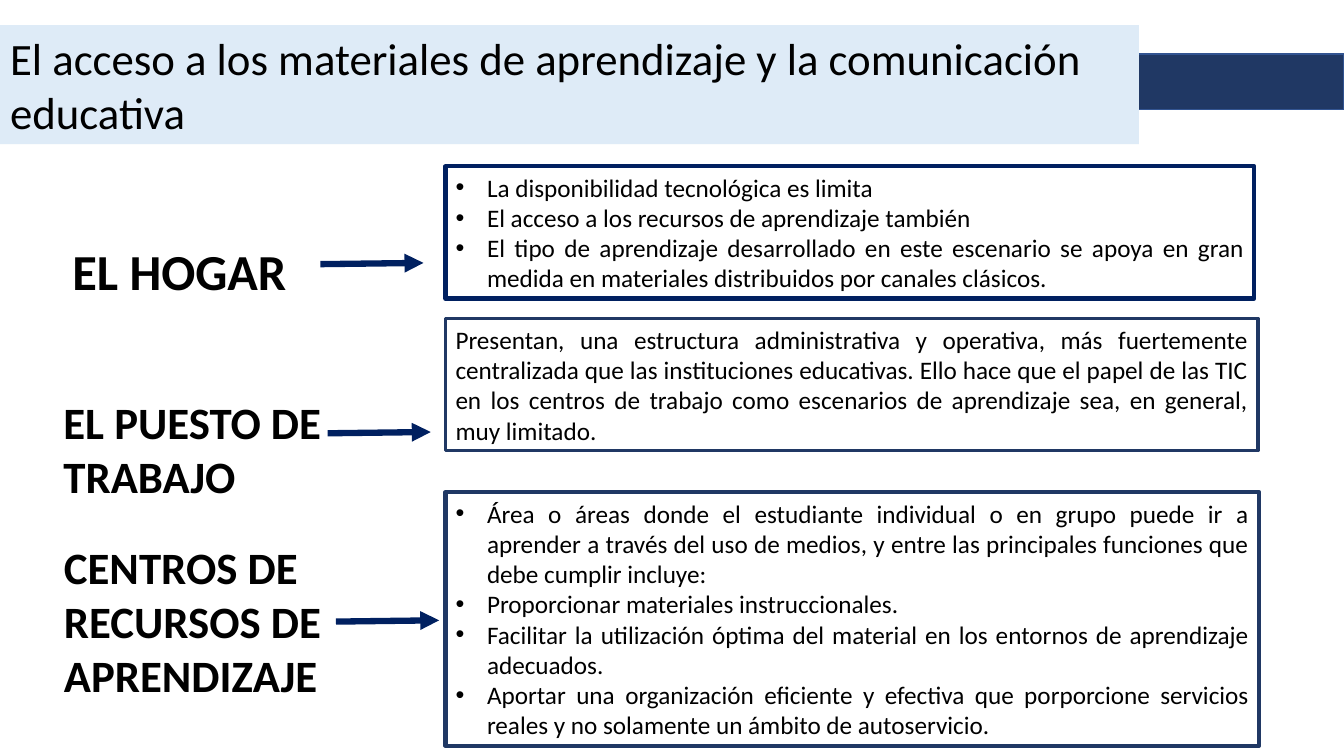
from lxml.etree import SubElement
from pptx import Presentation
from pptx.dml.color import RGBColor
from pptx.enum.shapes import MSO_CONNECTOR as Connector, MSO_SHAPE as Shape
from pptx.enum.text import MSO_ANCHOR as Anchor, MSO_AUTO_SIZE as AutoSize, PP_ALIGN as Align
from pptx.oxml.ns import qn
from pptx.util import Pt

COLORS = {
    "text": "000000",
    "white": "FFFFFF",
    "title": "DEEBF7",
    "band": "203864",
    "band_edge": "325491",
    "navy": "002060",
}
BULLET_INDENT = 22.5
BOX_LEFT = 318.3


def color(name):
    return RGBColor.from_string(COLORS[name])


class SlideBuilder:
    font = "Calibri"

    def __init__(self, presentation):
        self.slide = presentation.slides.add_slide(presentation.slide_layouts[5])

    def set_text(self, shape, paragraphs, size, bold=False, align=Align.LEFT,
                 anchor=Anchor.TOP, bullets=False, wrap=True):
        frame = shape.text_frame
        frame.text = "\n".join(paragraphs)
        frame.word_wrap = wrap
        frame.auto_size = AutoSize.SHAPE_TO_FIT_TEXT
        frame.vertical_anchor = anchor
        for paragraph in frame.paragraphs:
            paragraph.alignment = align
            paragraph.line_spacing = 1.0
            paragraph.font.name = self.font
            paragraph.font.size = Pt(size)
            paragraph.font.bold = bold
            paragraph.font.color.rgb = color("text")
            if bullets:
                self.add_bullet(paragraph)

    def add_bullet(self, paragraph):
        properties = paragraph._p.get_or_add_pPr()
        properties.set("marL", str(Pt(BULLET_INDENT)))
        properties.set("indent", str(-Pt(BULLET_INDENT)))
        # Bullet elements must precede the default run properties
        defaults = properties.find(qn("a:defRPr"))
        for tag, key, value in (("a:buFont", "typeface", "Arial"), ("a:buChar", "char", "•")):
            element = SubElement(properties, qn(tag))
            element.set(key, value)
            if defaults is not None:
                defaults.addprevious(element)

    def rectangle(self, left, top, width, height, fill, line, weight):
        shape = self.slide.shapes.add_shape(
            Shape.RECTANGLE, Pt(left), Pt(top), Pt(width), Pt(height))
        shape.shadow.inherit = False
        shape.fill.solid()
        shape.fill.fore_color.rgb = color(fill)
        shape.line.color.rgb = color(line)
        shape.line.width = Pt(weight)
        return shape

    def title(self, text, left, top, width, height):
        title = self.slide.shapes.title
        title.left, title.top, title.width, title.height = map(Pt, (left, top, width, height))
        title.fill.solid()
        title.fill.fore_color.rgb = color("title")
        self.set_text(title, [text], 32, anchor=Anchor.MIDDLE)
        return title

    def label(self, text, left, top, width, height, size, wrap):
        box = self.slide.shapes.add_textbox(Pt(left), Pt(top), Pt(width), Pt(height))
        self.set_text(box, [text], size, bold=True, wrap=wrap)

    def description(self, paragraphs, top, width, height, line, weight):
        box = self.rectangle(BOX_LEFT, top, width, height, "white", line, weight)
        self.set_text(box, paragraphs, 18, align=Align.JUSTIFY, anchor=Anchor.MIDDLE,
                      bullets=len(paragraphs) > 1)

    def arrow(self, left, top):
        """Draw a short, slightly rising arrow from a label to its description."""
        arrow = self.slide.shapes.add_connector(
            Connector.STRAIGHT, Pt(left), Pt(top), Pt(left + 73.7), Pt(top - 0.9))
        arrow.line.color.rgb = color("navy")
        arrow.line.width = Pt(4.5)
        SubElement(arrow.line._get_or_add_ln(), qn("a:tailEnd")).set("type", "triangle")
        SubElement(arrow._element.spPr, qn("a:effectLst"))


# label, label frame, label size, wrap; paragraphs, box frame, line, weight; arrow start
SCENARIOS = [
    ("EL HOGAR", (44.6, 167.8, 169.2, 51), 36, False,
     ["La disponibilidad tecnológica es limita",
      "El acceso a los recursos de aprendizaje también",
      "El tipo de aprendizaje desarrollado en este escenario se apoya en gran medida "
      "en materiales distribuidos por canales clásicos."],
     (118.8, 577.6, 94.5), "navy", 3, (228.8, 188.7)),
    ("EL PUESTO DE TRABAJO", (38.2, 278.6, 216.7, 85), 32, True,
     ["Presentan, una estructura administrativa y operativa, más fuertemente centralizada "
      "que las instituciones educativas. Ello hace que el papel de las TIC en los centros "
      "de trabajo como escenarios de aprendizaje sea, en general, muy limitado."],
     (227.5, 580.3, 94.5), "band", 2.25, (234, 309.5)),
    ("CENTROS DE RECURSOS DE APRENDIZAJE", (38.6, 382.3, 215.3, 123.8), 32, True,
     ["Área o áreas donde el estudiante individual o en grupo puede ir a aprender a través "
      "del uso de medios, y entre las principales funciones que debe cumplir incluye:",
      "Proporcionar materiales instruccionales.",
      "Facilitar la utilización óptima del material en los entornos de aprendizaje adecuados.",
      "Aportar una organización eficiente y efectiva que porporcione servicios reales y no "
      "solamente un ámbito de autoservicio."],
     (351.4, 581, 181.4), "band", 3, (240, 444)),
]


def main():
    presentation = Presentation()
    presentation.slide_width = Pt(960)
    presentation.slide_height = Pt(540)
    builder = SlideBuilder(presentation)

    band = builder.rectangle(0, 38.6, 960, 39.6, "band", "band_edge", 1)
    title = builder.title(
        "El acceso a los materiales de aprendizaje y la comunicación educativa",
        0, 18, 813.6, 85)
    title._element.addprevious(band._element)  # the band lies behind the title

    for label, frame, size, wrap, paragraphs, box, line, weight, start in SCENARIOS:
        builder.description(paragraphs, *box, line, weight)
        builder.label(label, *frame, size, wrap)
        builder.arrow(*start)

    presentation.save("out.pptx")


if __name__ == "__main__":
    main()
